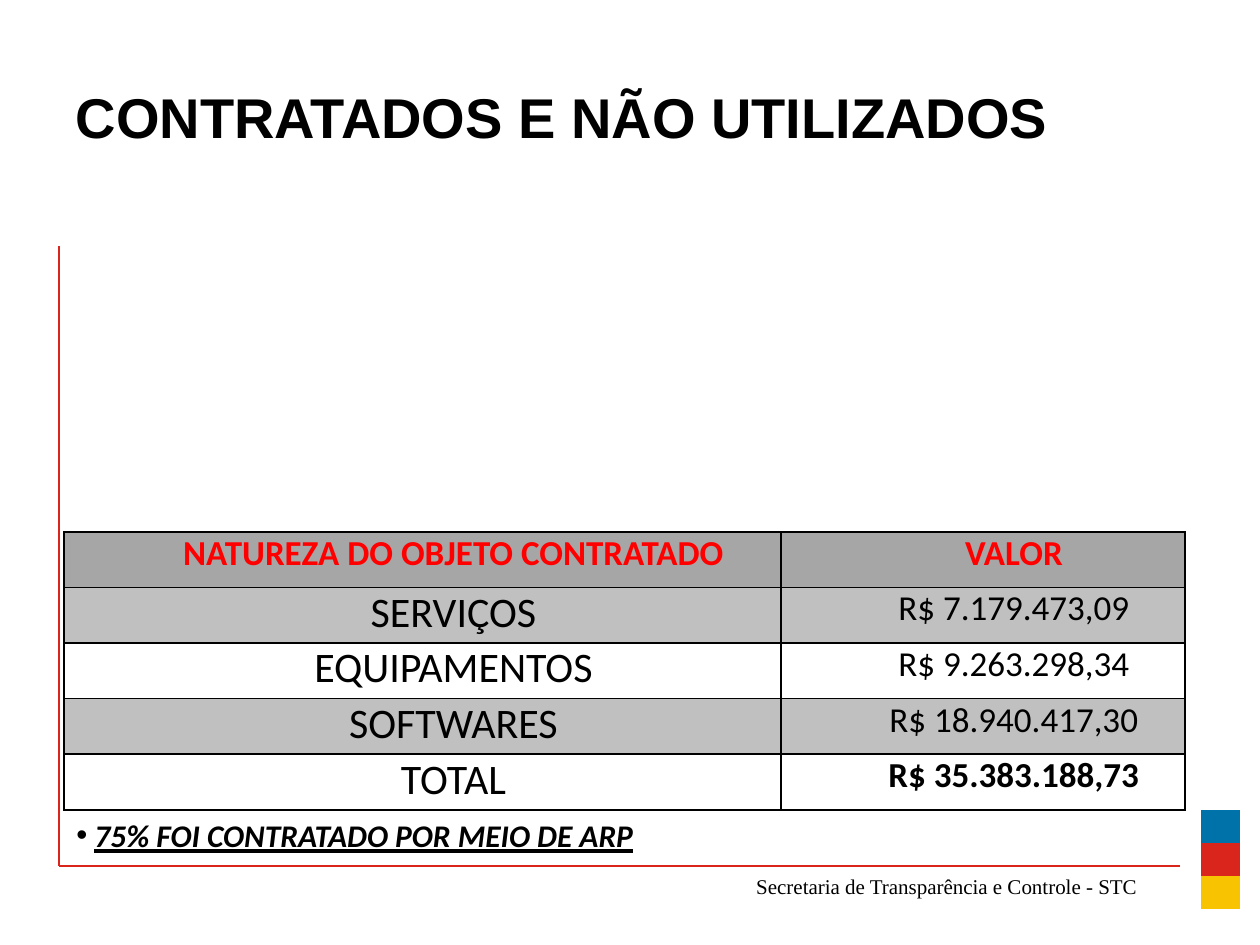
"""Build the slide on contracted but unused items, with its value table."""
from typing import Any, NamedTuple, Optional

from lxml import etree
from pptx import Presentation
from pptx.dml.color import RGBColor
from pptx.enum.shapes import MSO_CONNECTOR
from pptx.enum.text import MSO_ANCHOR, MSO_AUTO_SIZE, PP_ALIGN
from pptx.oxml.ns import qn
from pptx.util import Emu, Pt

STRAIGHT = MSO_CONNECTOR.STRAIGHT
MIDDLE = MSO_ANCHOR.MIDDLE
NO_FIT, GROW = MSO_AUTO_SIZE.NONE, MSO_AUTO_SIZE.SHAPE_TO_FIT_TEXT
LEFT, CENTER, RIGHT = PP_ALIGN.LEFT, PP_ALIGN.CENTER, PP_ALIGN.RIGHT
TITLE_ONLY = 5
PX_PER_INCH = 126
COLORS = {
    "black": "000000", "header": "A6A6A6", "band": "C0C0C0", "heading": "FF0000",
    "blue": "0072AA", "red": "DA251D", "yellow": "F8C300",
}
BORDER_SIDES = ("a:lnL", "a:lnR", "a:lnT", "a:lnB")


class Box(NamedTuple):
    left: int
    top: int
    width: int
    height: int


class Rule(NamedTuple):
    x1: int
    y1: int
    x2: int
    y2: int


class Entry(NamedTuple):
    nature: str
    value: str
    fill: Optional[str]
    color: str = "black"
    nature_format: dict[str, Any] = {"size": Pt(24), "bold": False}
    value_format: dict[str, Any] = {"size": Pt(20), "bold": False}


HEADING = {"size": Pt(20), "bold": True}
ENTRIES = (
    Entry("NATUREZA DO OBJETO CONTRATADO", "VALOR", "header", "heading", HEADING, HEADING),
    Entry("SERVIÇOS", "R$ 7.179.473,09", "band"),
    Entry("EQUIPAMENTOS", "R$ 9.263.298,34", None),
    Entry("SOFTWARES", "R$ 18.940.417,30", "band"),
    Entry("TOTAL", "R$ 35.383.188,73", None, value_format=HEADING),
)
RULES = (Rule(59, 246, 59, 866), Rule(59, 866, 1180, 866))
STRIPES = ("blue", "red", "yellow")
COLUMN_WIDTHS = (717, 404)
TITLE_BOX = Box(63, 38, 1003, 157)
ENTRIES_BOX = Box(64, 532, sum(COLUMN_WIDTHS), 278)
STRIPES_BOX = Box(1201, 810, 39, 99)
FOOTER_BOX = Box(108, 867, 1042, 38)
NOTE_BOX = Box(64, 810, 903, 50)
FIRST_LINE_INDENT = 62
BULLET_INDENT = 18


def px(length: int) -> Emu:
    """Turn pixels into EMU."""
    return Emu(round(length * 914400 / PX_PER_INCH))


def scaled(box: Box) -> list[Emu]:
    """Turn a box into EMU lengths."""
    return [px(length) for length in box]


def apply(target: Any, values: dict[str, Any]) -> None:
    """Set each named attribute on the target."""
    for name, value in values.items():
        setattr(target, name, value)


def write(paragraph: Any, text: str, color: str, **values: Any) -> None:
    """Add one formatted run to a paragraph."""
    run = paragraph.add_run()
    run.text = text
    apply(run.font, values)
    run.font.color.rgb = RGBColor.from_string(COLORS[color])


def draw_rule(slide: Any, rule: Rule) -> None:
    """Draw a thin red rule."""
    line = slide.shapes.add_connector(STRAIGHT, *(px(length) for length in rule))
    line.line.color.rgb = RGBColor.from_string(COLORS["red"])
    line.line.width = Pt(0.75)
    etree.SubElement(line._element.spPr, qn("a:effectLst"))


def add_grid(slide: Any, box: Box, rows: int, columns: int) -> Any:
    """Add a table without header or band styling."""
    grid = slide.shapes.add_table(rows, columns, *scaled(box)).table
    apply(grid, {"first_row": False, "horz_banding": False})
    return grid


def style_cell(cell: Any, fill: Optional[str], border: Optional[str], margin: int) -> None:
    """Set the margins, borders and fill of a cell."""
    apply(cell, {"margin_left": px(margin), "margin_right": px(margin),
                 "margin_top": 0, "margin_bottom": 0})
    properties = cell._tc.get_or_add_tcPr()
    for side in BORDER_SIDES:
        line = etree.SubElement(properties, qn(side), w=str(Pt(1)))
        if border:
            paint = etree.SubElement(line, qn("a:solidFill"))
            etree.SubElement(paint, qn("a:srgbClr"), val=COLORS[border])
        else:
            etree.SubElement(line, qn("a:noFill"))
    if fill:
        cell.fill.solid()
        cell.fill.fore_color.rgb = RGBColor.from_string(COLORS[fill])
    else:
        cell.fill.background()


def draw_entries(slide: Any) -> None:
    """Draw the table of contracted values."""
    grid = add_grid(slide, ENTRIES_BOX, len(ENTRIES), len(COLUMN_WIDTHS))
    for column, width in zip(grid.columns, COLUMN_WIDTHS):
        column.width = px(width)
    for row, entry in zip(grid.rows, ENTRIES):
        contents = ((entry.nature, entry.nature_format), (entry.value, entry.value_format))
        for cell, (text, values) in zip(row.cells, contents):
            style_cell(cell, entry.fill, "black", 9)
            paragraph = cell.text_frame.paragraphs[0]
            paragraph.alignment = CENTER
            paragraph._p.get_or_add_pPr().set("indent", str(px(FIRST_LINE_INDENT)))
            write(paragraph, text, entry.color, name="Calibri", **values)


def draw_stripes(slide: Any) -> None:
    """Draw the three coloured blocks at the right edge."""
    grid = add_grid(slide, STRIPES_BOX, len(STRIPES), 1)
    for row, color in zip(grid.rows, STRIPES):
        cell = row.cells[0]
        style_cell(cell, color, None, 0)
        etree.SubElement(cell.text_frame.paragraphs[0]._p, qn("a:endParaRPr"), sz="800")


def add_text(slide: Any, box: Box, alignment: Any) -> Any:
    """Add a wrapping text box and return its first paragraph."""
    frame = slide.shapes.add_textbox(*scaled(box)).text_frame
    apply(frame, {"word_wrap": True, "auto_size": GROW})
    paragraph = frame.paragraphs[0]
    paragraph.alignment = alignment
    return paragraph


def draw_title(slide: Any) -> None:
    """Place and format the title."""
    title = slide.shapes.title
    apply(title, dict(zip(Box._fields, scaled(TITLE_BOX))))
    apply(title.text_frame, {"vertical_anchor": MIDDLE, "auto_size": NO_FIT, "word_wrap": True})
    paragraph = title.text_frame.paragraphs[0]
    paragraph.alignment = LEFT
    write(paragraph, "CONTRATADOS E NÃO UTILIZADOS", "black",
          name="Arial", size=Pt(32), bold=True)


def draw_note(slide: Any) -> None:
    """Draw the bulleted remark below the table."""
    paragraph = add_text(slide, NOTE_BOX, LEFT)
    properties = paragraph._p.get_or_add_pPr()
    properties.set("marL", str(px(BULLET_INDENT)))
    properties.set("indent", str(-px(BULLET_INDENT)))
    etree.SubElement(properties, qn("a:buFont"), typeface="Arial")
    etree.SubElement(properties, qn("a:buChar"), char="•")
    write(paragraph, "75% FOI CONTRATADO POR MEIO DE ARP", "black",
          name="Calibri", size=Pt(18), bold=True, italic=True, underline=True)


def main() -> None:
    """Build and save the slide."""
    deck = Presentation()
    apply(deck, {"slide_width": px(1260), "slide_height": px(945)})
    slide = deck.slides.add_slide(deck.slide_layouts[TITLE_ONLY])
    for rule in RULES:
        draw_rule(slide, rule)
    write(add_text(slide, FOOTER_BOX, RIGHT), "Secretaria de Transparência e Controle - STC",
          "black", name="Times New Roman", size=Pt(12))
    draw_stripes(slide)
    draw_title(slide)
    draw_entries(slide)
    draw_note(slide)
    deck.save("out.pptx")


if __name__ == "__main__":
    main()
